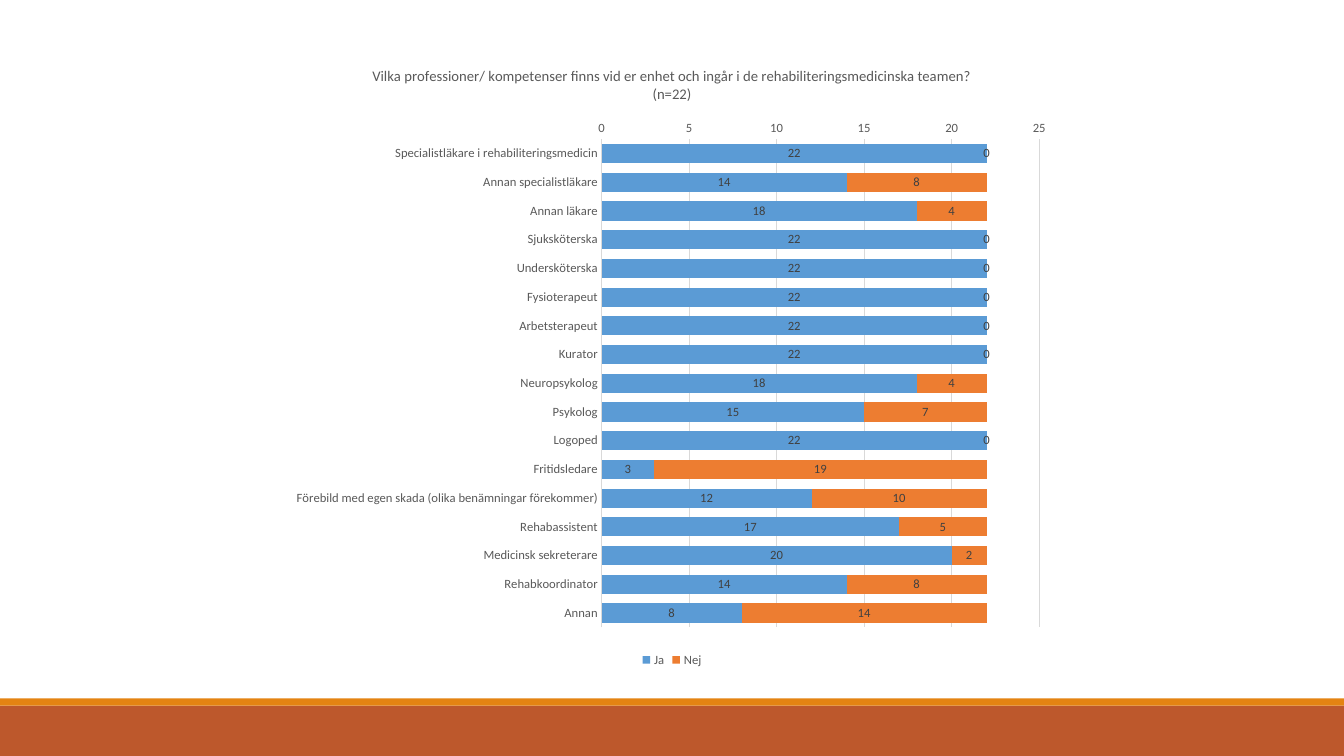
from lxml import etree
from pptx import Presentation
from pptx.chart.data import CategoryChartData
from pptx.dml.color import RGBColor
from pptx.enum import chart as ch, shapes
from pptx.oxml.ns import qn
from pptx.util import Inches, Pt

COLORS = {
    "rust": "BD582C", "orange": "E48312",
    "Ja": "5B9BD5", "Nej": "ED7D31",
    "text": "595959", "label": "404040", "grid": "D9D9D9",
}
TEAM = [  # profession, Ja, Nej
    ("Specialistläkare i rehabiliteringsmedicin", 22, 0),
    ("Annan specialistläkare", 14, 8),
    ("Annan läkare", 18, 4),
    ("Sjuksköterska", 22, 0),
    ("Undersköterska", 22, 0),
    ("Fysioterapeut", 22, 0),
    ("Arbetsterapeut", 22, 0),
    ("Kurator", 22, 0),
    ("Neuropsykolog", 18, 4),
    ("Psykolog", 15, 7),
    ("Logoped", 22, 0),
    ("Fritidsledare", 3, 19),
    ("Förebild med egen skada (olika benämningar förekommer)", 12, 10),
    ("Rehabassistent", 17, 5),
    ("Medicinsk sekreterare", 20, 2),
    ("Rehabkoordinator", 14, 8),
    ("Annan", 8, 14),
]
TITLE = ("Vilka professioner/ kompetenser finns vid er enhet och ingår i de "
         "rehabiliteringsmedicinska teamen? (n=22)")
PLOT = {"x": 0.41, "y": 0.15, "w": 0.56, "h": 0.78}


class Deck:
    font = "Calibri"

    def __init__(self, prs):
        self.s = prs.slides.add_slide(prs.slide_layouts[6])

    def style(self, font, size, color):
        fmt = {"name": self.font, "size": Pt(size), "bold": False}
        for key, value in fmt.items():
            setattr(font, key, value)
        font.color.rgb = RGBColor.from_string(COLORS[color])

    def band(self, top, height, color):
        sp = self.s.shapes.add_shape(shapes.MSO_SHAPE.RECTANGLE, 0, Inches(top),
                                     Inches(13.33), Inches(height))
        sp.shadow.inherit = False
        sp.fill.solid()
        sp.fill.fore_color.rgb = RGBColor.from_string(COLORS[color])
        sp.line.fill.background()

    def stacked_bars(self, at, title, rows, names):
        data = CategoryChartData()
        data.categories = [row[0] for row in rows]
        for i, name in enumerate(names, 1):
            data.add_series(name, [row[i] for row in rows])
        chart = self.s.shapes.add_chart(ch.XL_CHART_TYPE.BAR_STACKED,
                                        *map(Inches, at), data).chart
        self.style(chart.font, 10, "text")
        self.title(chart, title)
        self.axes(chart)
        self.series(chart.plots[0])
        self.place_plot(chart)
        chart.has_legend = True
        chart.legend.position = ch.XL_LEGEND_POSITION.BOTTOM
        chart.legend.include_in_layout = False
        self.style(chart.legend.font, 9, "text")

    def title(self, chart, title):
        chart.has_title = True
        p = chart.chart_title.text_frame.paragraphs[0]
        r = p.add_run()
        r.text = title
        self.style(r.font, 10.5, "text")
        chart.chart_title.include_in_layout = False

    def axes(self, chart):
        cat, val = chart.category_axis, chart.value_axis
        for axis in (cat, val):
            axis.major_tick_mark = axis.minor_tick_mark = ch.XL_TICK_MARK.NONE
            self.style(axis.tick_labels.font, 9, "text")
        cat.reverse_order = True
        val.has_major_gridlines = True
        val.format.line.fill.background()
        for line in (cat.format.line, val.major_gridlines.format.line):
            line.color.rgb = RGBColor.from_string(COLORS["grid"])
            line.width = Pt(0.75)
        fmt = {"minimum_scale": 0, "maximum_scale": 25, "major_unit": 5}
        for key, value in fmt.items():
            setattr(val, key, value)

    def series(self, plot):
        fmt = {"gap_width": 50, "overlap": 100, "vary_by_categories": False}
        for key, value in fmt.items():
            setattr(plot, key, value)
        for ser in plot.series:
            ser.format.fill.solid()
            ser.format.fill.fore_color.rgb = RGBColor.from_string(COLORS[ser.name])
            labels = ser.data_labels
            labels.show_value = True
            labels.position = ch.XL_LABEL_POSITION.CENTER
            self.style(labels.font, 9, "label")

    def place_plot(self, chart):
        area = chart.plots[0]._element.getparent()
        for old in area.findall(qn("c:layout")):
            area.remove(old)
        layout = etree.Element(qn("c:layout"))
        area.insert(0, layout)
        manual = etree.SubElement(layout, qn("c:manualLayout"))
        fmt = {"layoutTarget": "inner", "xMode": "edge", "yMode": "edge", **PLOT}
        for key, value in fmt.items():
            etree.SubElement(manual, qn("c:" + key)).set("val", str(value))


def main():
    prs = Presentation()
    prs.slide_width, prs.slide_height = Inches(13.33), Inches(7.5)
    deck = Deck(prs)
    # Footer bands
    deck.band(7, 0.5, "rust")
    deck.band(6.93, 0.07, "orange")
    # Team chart
    deck.stacked_bars((2.79, 0.45, 7.75, 6.21), TITLE, TEAM, ("Ja", "Nej"))
    prs.save("out.pptx")


if __name__ == "__main__":
    main()
